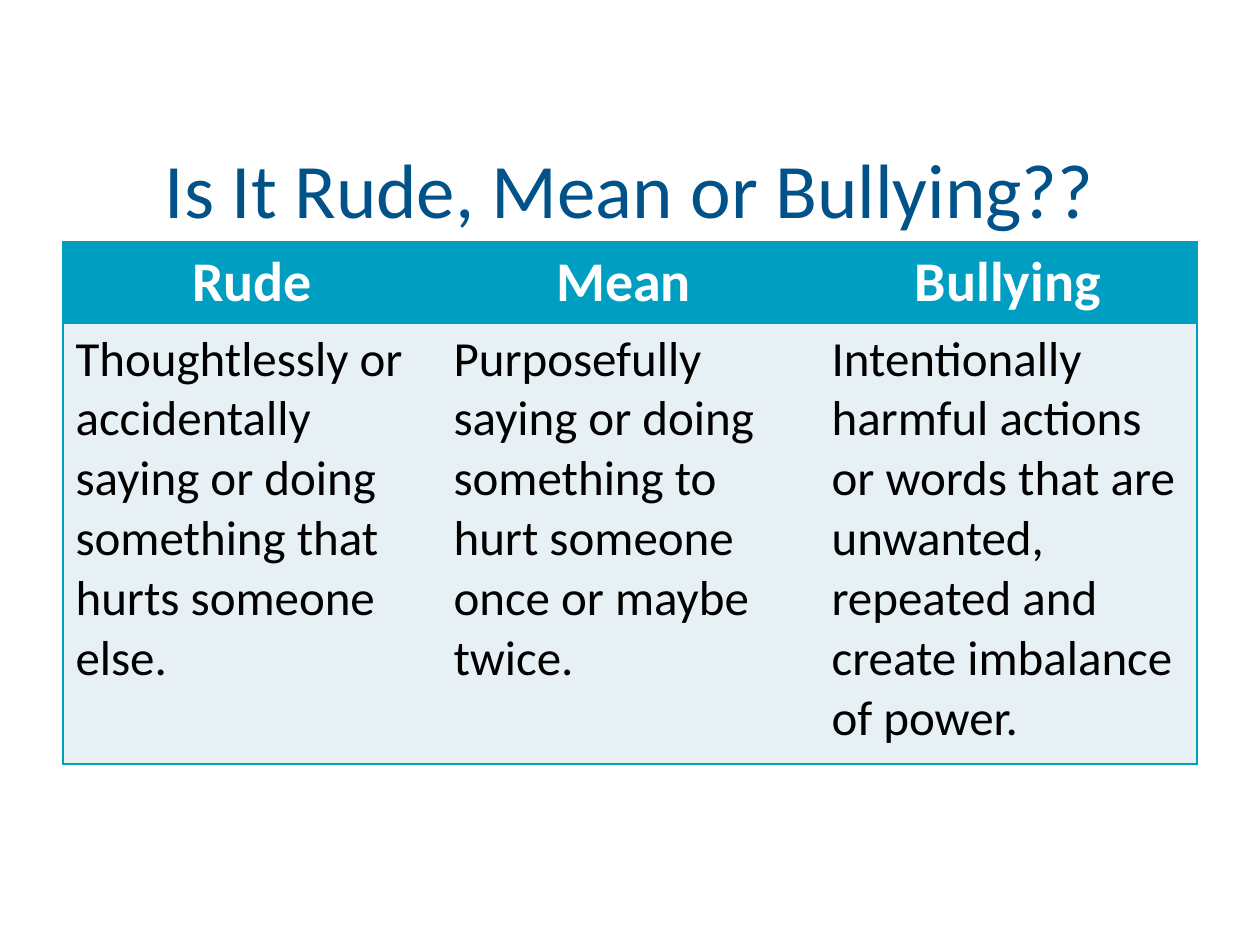
from lxml.etree import SubElement
from pptx import Presentation
from pptx.dml.color import RGBColor
from pptx.enum.text import MSO_ANCHOR as Anchor, MSO_AUTO_SIZE as AutoSize, PP_ALIGN as Align
from pptx.oxml.ns import qn
from pptx.util import Emu, Pt

COLORS = {"title": "005288", "teal": "009FC2", "pale": "E7F0F4",
          "white": "FFFFFF", "black": "000000"}
FONT = "Calibri"
PX_PER_INCH = 126


def px(length):
    return Emu(round(length * 914400 / PX_PER_INCH))


def rgb(name):
    return RGBColor.from_string(COLORS[name])


class SlideBuilder:
    def __init__(self, slide):
        self.slide = slide

    def style(self, frame, size, color, align, bold=False):
        for paragraph in frame.paragraphs:
            paragraph.alignment = align
            for run in paragraph.runs:
                run.font.name = FONT
                run.font.size = Pt(size)
                run.font.bold = bold
                run.font.color.rgb = rgb(color)

    def title(self, text, left, top, width, height):
        heading = self.slide.shapes.title
        heading.left, heading.top = px(left), px(top)
        heading.width, heading.height = px(width), px(height)
        frame = heading.text_frame
        frame.text = text
        frame.word_wrap = True
        frame.auto_size = AutoSize.NONE
        frame.vertical_anchor = Anchor.MIDDLE
        self.style(frame, 44, "title", Align.CENTER)

    def borders(self, cell, visible):
        """Draw the visible sides (of L, R, T, B) and clear the others."""
        properties = cell._tc.get_or_add_tcPr()
        for side in "LRTB":
            line = SubElement(properties, qn(f"a:ln{side}"), w=str(Pt(1)))
            if side in visible:
                fill = SubElement(line, qn("a:solidFill"))
                SubElement(fill, qn("a:srgbClr"), val=COLORS["teal"])
            else:
                SubElement(line, qn("a:noFill"))

    def table(self, rows, left, top, column_width, row_heights):
        columns = len(rows[0])
        grid = self.slide.shapes.add_table(
            len(rows), columns, px(left), px(top),
            px(column_width * columns), px(sum(row_heights))).table
        for column in grid.columns:
            column.width = px(column_width)
        for r, (texts, height) in enumerate(zip(rows, row_heights)):
            grid.rows[r].height = px(height)
            for c, text in enumerate(texts):
                cell = grid.cell(r, c)
                cell.text = text
                # Only the outer edges and the lines between rows show
                self.borders(cell, "TB" + "L" * (c == 0) + "R" * (c == columns - 1))
                cell.fill.solid()
                cell.fill.fore_color.rgb = rgb("pale" if r else "teal")
                if r:
                    self.style(cell.text_frame, 28, "black", Align.LEFT)
                else:
                    self.style(cell.text_frame, 32, "white", Align.CENTER, bold=True)


def main():
    deck = Presentation()
    deck.slide_width, deck.slide_height = px(1260), px(945)
    builder = SlideBuilder(deck.slides.add_slide(deck.slide_layouts[5]))

    # Heading
    builder.title("Is It Rude, Mean or Bullying??", 63, 132, 1134, 111)

    # Definitions
    behaviors = ["Rude", "Mean ", "Bullying"]
    definitions = [
        "Thoughtlessly or accidentally saying or doing something that hurts someone else.",
        "Purposefully saying or doing something to hurt someone once or maybe twice.",
        "Intentionally harmful actions or words that are unwanted, repeated and "
        "create imbalance of power.",
    ]
    builder.table([behaviors, definitions], 63, 242, 378, [81, 441])

    deck.save("out.pptx")


if __name__ == "__main__":
    main()
